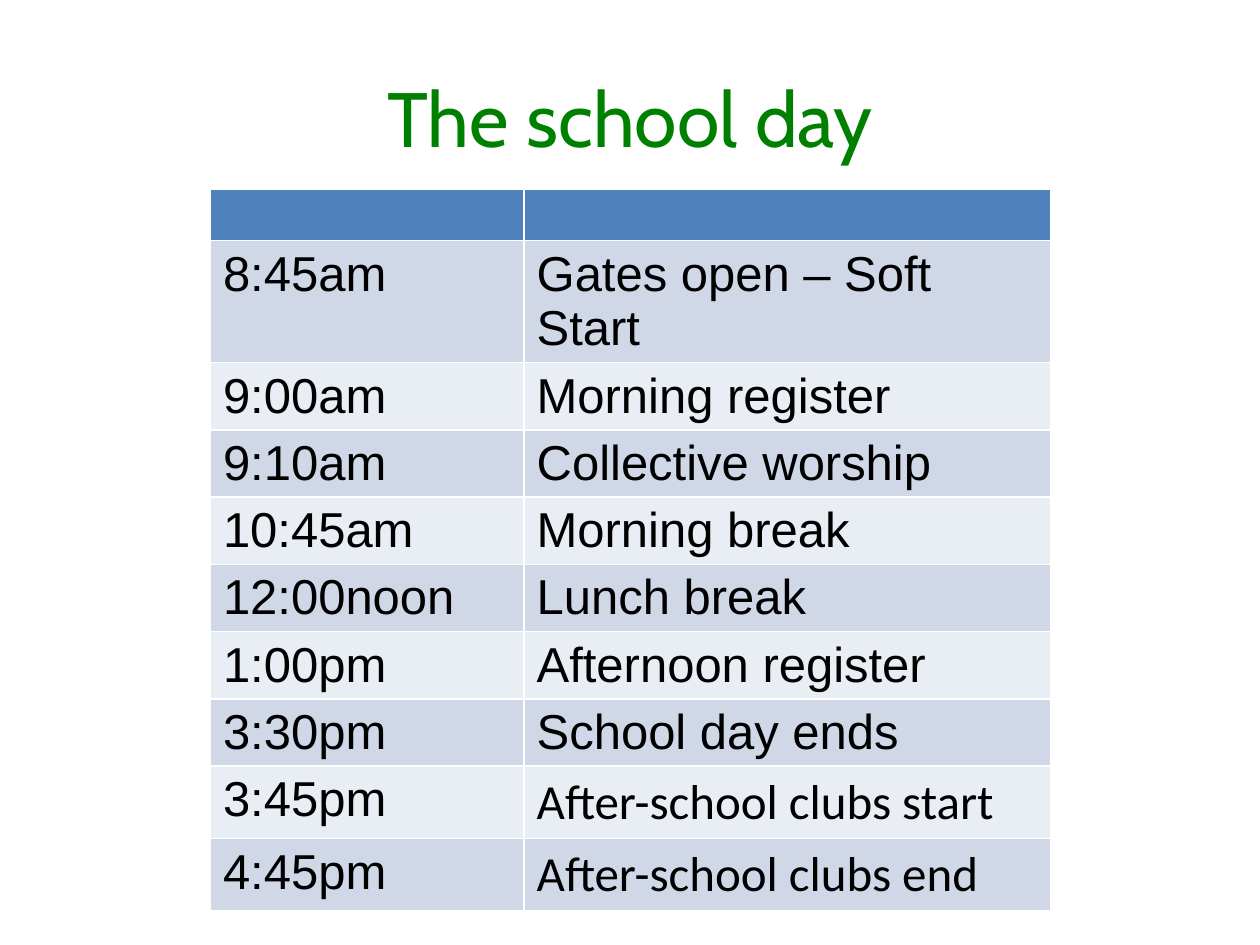
"""Build the school day timetable slide."""
from pptx import Presentation
from pptx.dml.color import RGBColor
from pptx.enum.text import MSO_ANCHOR, PP_ALIGN
from pptx.util import Inches, Pt

CENTER = PP_ALIGN.CENTER
MIDDLE = MSO_ANCHOR.MIDDLE
TITLE_ONLY = 5

THEME = {
    "title": {"name": "Cabin", "size": Pt(44), "color": "008000"},
    "time": {"name": "Arial", "size": Pt(28), "color": "000000"},
    "club": {"name": "Calibri", "size": Pt(28), "color": "000000"},
    "header": "4F81BD",
    "bands": ("E9EDF4", "D0D8E8"),
}
TIMETABLE = [
    ("8:45am", "Gates open – Soft Start"),
    ("9:00am", "Morning register"),
    ("9:10am", "Collective worship"),
    ("10:45am", "Morning break"),
    ("12:00noon", "Lunch break"),
    ("1:00pm", "Afternoon register"),
    ("3:30pm", "School day ends"),
    ("3:45pm", "After-school clubs start"),
    ("4:45pm", "After-school clubs end"),
]
COLUMN_WIDTHS = (2.49, 4.18)
ROW_HEIGHT = 0.41


def write(para, text, style):
    span = para.add_run()
    span.text = text
    for key, value in style.items():
        if key == "color":
            span.font.color.rgb = RGBColor.from_string(value)
        else:
            setattr(span.font, key, value)


deck = Presentation()
deck.slide_width, deck.slide_height = Inches(10), Inches(7.5)
page = deck.slides.add_slide(deck.slide_layouts[TITLE_ONLY])

title = page.shapes.title
title_place = {"left": 0.5, "top": 0.3, "width": 9, "height": 1.25}
for side, length in title_place.items():
    setattr(title, side, Inches(length))
title.text_frame.vertical_anchor = MIDDLE
heading = title.text_frame.paragraphs[0]
heading.alignment = CENTER
write(heading, "The school day", THEME["title"])

row_count = len(TIMETABLE) + 1
table = page.shapes.add_table(
    row_count, len(COLUMN_WIDTHS), Inches(1.67), Inches(1.5),
    Inches(sum(COLUMN_WIDTHS)), Inches(ROW_HEIGHT * row_count),
).table
for column, width in zip(table.columns, COLUMN_WIDTHS):
    column.width = Inches(width)

for row_index, row in enumerate(table.rows):
    row.height = Inches(ROW_HEIGHT)
    color = THEME["bands"][row_index % 2] if row_index else THEME["header"]
    for cell in row.cells:
        cell.fill.solid()
        cell.fill.fore_color.rgb = RGBColor.from_string(color)

for row_index, entry in enumerate(TIMETABLE, start=1):
    for column_index, text in enumerate(entry):
        style = THEME["club" if text.startswith("After-school") else "time"]
        para = table.cell(row_index, column_index).text_frame.paragraphs[0]
        write(para, text, style)

deck.save("out.pptx")
